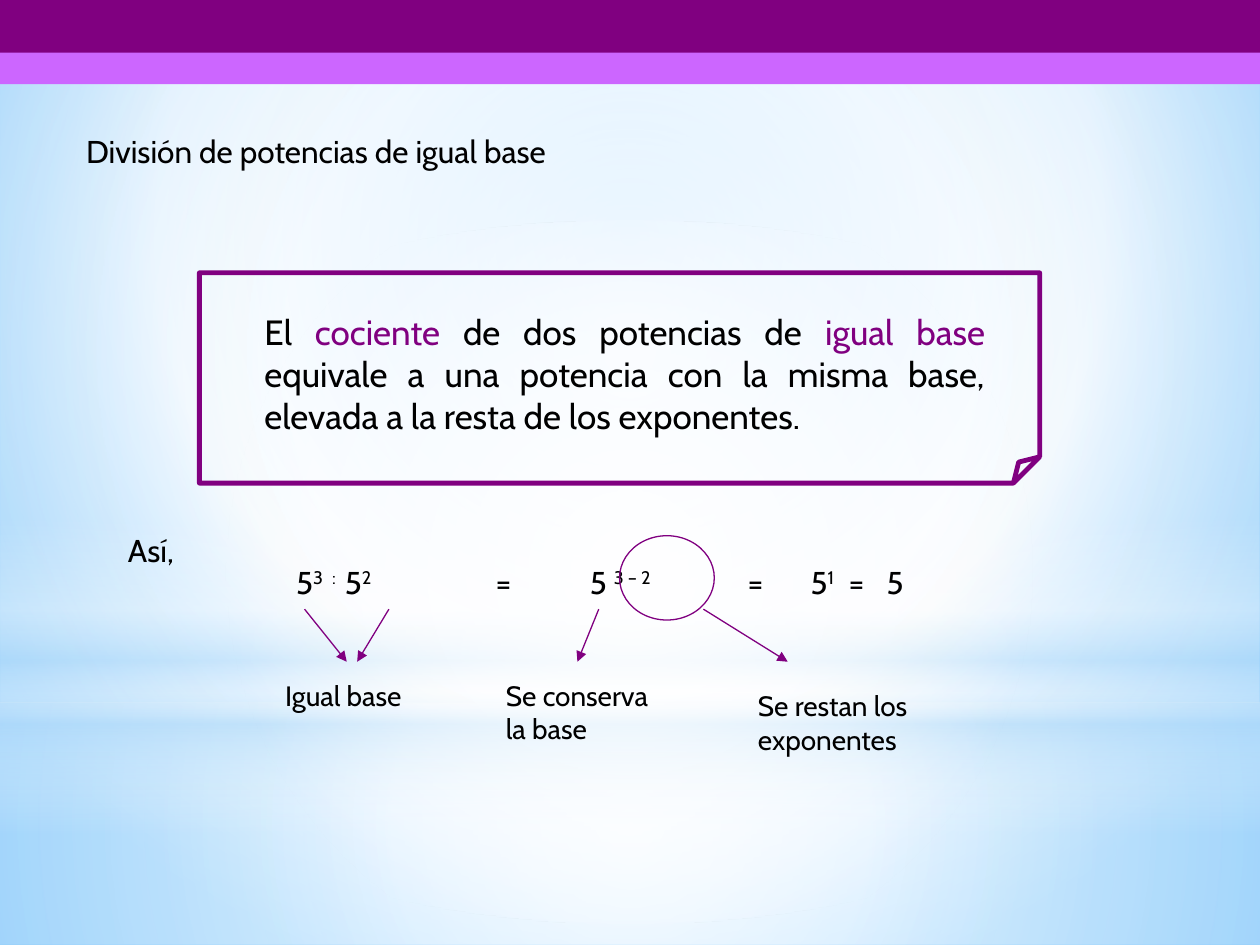
from dataclasses import dataclass
from typing import NamedTuple

from lxml.etree import SubElement
from pptx import Presentation
from pptx.dml.color import RGBColor
from pptx.enum.shapes import MSO_CONNECTOR, MSO_SHAPE
from pptx.enum.text import MSO_ANCHOR, PP_ALIGN
from pptx.oxml.ns import qn
from pptx.util import Cm, Pt

PURPLE = "800080"
LILAC = "CC66FF"
BLACK = "000000"
WHITE = "FFFFFF"
SKY = "B4DCFA"
FONT = "Cabin"
WIDTH, HEIGHT = 25.4, 19.05
CENTER = (50, 50, 50, 50)


class Box(NamedTuple):
    left: float
    top: float
    width: float
    height: float


class Stop(NamedTuple):
    position: int
    color: str
    opacity: int = 100


class Piece(NamedTuple):
    text: str
    color: str = BLACK
    raised: bool = False
    spacing: float = 0


@dataclass
class Label:
    box: Box
    pieces: list[Piece]
    size: int = 18
    alignment: PP_ALIGN = PP_ALIGN.LEFT


@dataclass
class Glow:
    kind: MSO_SHAPE
    box: Box
    stops: list[Stop]
    focus: tuple[int, ...] | None = CENTER


class Arrow(NamedTuple):
    start_x: float
    end_x: float


def rgb(color: str) -> RGBColor:
    return RGBColor.from_string(color)


def lengths(box: Box) -> list[Cm]:
    return [Cm(value) for value in box]


def set_gradient(fill, parent, stops: list[Stop], focus: tuple[int, ...] | None) -> None:
    fill.solid()
    solid = parent.find(qn("a:solidFill"))
    gradient = SubElement(parent, qn("a:gradFill"), rotWithShape="1")
    parent.replace(solid, gradient)
    stop_list = SubElement(gradient, qn("a:gsLst"))
    for stop in stops:
        entry = SubElement(stop_list, qn("a:gs"), pos=str(stop.position * 1000))
        color = SubElement(entry, qn("a:srgbClr"), val=stop.color)
        if stop.opacity < 100:
            SubElement(color, qn("a:alpha"), val=str(stop.opacity * 1000))
    if focus is None:
        SubElement(gradient, qn("a:lin"), ang="5400000", scaled="0")
        return
    circle = SubElement(gradient, qn("a:path"), path="circle")
    edges = {side: str(value * 1000) for side, value in zip("ltrb", focus)}
    SubElement(circle, qn("a:fillToRect"), **edges)


def add_plain_shape(slide, kind: MSO_SHAPE, box: Box):
    shape = slide.shapes.add_shape(kind, *lengths(box))
    shape.shadow.inherit = False
    shape.fill.background()
    shape.line.fill.background()
    return shape


def add_glow(slide, glow: Glow) -> None:
    shape = add_plain_shape(slide, glow.kind, glow.box)
    set_gradient(shape.fill, shape._element.spPr, glow.stops, glow.focus)


def add_band(slide, box: Box, color: str) -> None:
    shape = add_plain_shape(slide, MSO_SHAPE.RECTANGLE, box)
    shape.fill.solid()
    shape.fill.fore_color.rgb = rgb(color)


def add_outline(slide, kind: MSO_SHAPE, box: Box, weight: float):
    shape = add_plain_shape(slide, kind, box)
    shape.line.color.rgb = rgb(PURPLE)
    shape.line.width = Pt(weight)
    return shape


def write_label(shape, label: Label) -> None:
    shape.left, shape.top, shape.width, shape.height = lengths(label.box)
    frame = shape.text_frame
    frame.word_wrap = True
    frame.vertical_anchor = MSO_ANCHOR.TOP
    paragraph = frame.paragraphs[0]
    paragraph.alignment = label.alignment
    for piece in label.pieces:
        run = paragraph.add_run()
        run.text = piece.text
        run.font.name = FONT
        run.font.size = Pt(label.size)
        run.font.color.rgb = rgb(piece.color)
        properties = run._r.get_or_add_rPr()
        if piece.raised:
            properties.set("baseline", "30000")
        if piece.spacing:
            properties.set("spc", str(round(piece.spacing * 100)))


def add_arrow(slide, arrow: Arrow, top: float = 12.28, bottom: float = 13.34) -> None:
    connector = slide.shapes.add_connector(
        MSO_CONNECTOR.STRAIGHT, Cm(arrow.start_x), Cm(top), Cm(arrow.end_x), Cm(bottom)
    )
    connector.line.color.rgb = rgb(PURPLE)
    connector.line.width = Pt(0.75)
    SubElement(connector.line._get_or_add_ln(), qn("a:tailEnd"), type="triangle")
    SubElement(connector._element.spPr, qn("a:effectLst"))


BACKGROUND = [Stop(0, "9ED5FF"), Stop(60, WHITE), Stop(100, "5BB9FF")]
GLOWS = [
    Glow(MSO_SHAPE.RECTANGLE, Box(0, 14.17, WIDTH, 4.88),
         [Stop(0, WHITE, 91), Stop(37, WHITE, 76), Stop(100, SKY, 79)]),
    Glow(MSO_SHAPE.RECTANGLE, Box(0, 0, WIDTH, 14.17),
         [Stop(0, WHITE, 89), Stop(48, WHITE, 62), Stop(100, SKY, 79)]),
    Glow(MSO_SHAPE.RECTANGLE, Box(0, 10.46, WIDTH, 6.35),
         [Stop(0, WHITE, 0), Stop(29, WHITE, 30), Stop(45, SKY, 40),
          Stop(55, WHITE, 26), Stop(65, SKY, 60), Stop(100, WHITE, 0)], None),
    Glow(MSO_SHAPE.OVAL, Box(0, 4.45, WIDTH, 14.17), [Stop(0, WHITE), Stop(56, WHITE, 0)]),
]
HEADING = Label(Box(1.48, 2.54, 19.05, 1.27), [Piece("División de potencias de igual base")])
ROW_TOP, ROW_HEIGHT = 11.22, 1.27
LABELS = [
    Label(Box(5.08, 6.14, 15.03, 2.79), [
        Piece("El "), Piece("cociente", PURPLE), Piece(" de dos potencias de "),
        Piece("igual base", PURPLE),
        Piece(" equivale a una potencia con la misma base, elevada a la resta de los exponentes."),
    ], 20, PP_ALIGN.JUSTIFY),
    Label(Box(2.33, 10.58, 2.75, 1.02), [Piece("Así,")]),
    Label(Box(5.72, ROW_TOP, 3.39, ROW_HEIGHT), [
        Piece("5"), Piece("3 : ", raised=True, spacing=1.4), Piece("5"), Piece("2", raised=True)]),
    Label(Box(9.74, ROW_TOP, 2.75, ROW_HEIGHT), [Piece("=")]),
    Label(Box(11.64, ROW_TOP, 3.39, ROW_HEIGHT), [Piece("5 "), Piece("3 – 2", raised=True)]),
    Label(Box(14.82, ROW_TOP, 2.75, ROW_HEIGHT), [Piece("=")]),
    Label(Box(16.09, ROW_TOP, 4.66, ROW_HEIGHT),
          [Piece("5"), Piece("1", raised=True), Piece(" = ", spacing=4.3), Piece("5")]),
    Label(Box(5.5, 13.55, 3.6, 0.94), [Piece("Igual base")], 16),
    Label(Box(9.95, 13.55, 3.81, 1.63), [Piece("Se conserva la base")], 16),
    Label(Box(15.03, 13.76, 4.23, 1.63), [Piece("Se restan los exponentes")], 16),
]
ARROWS = [Arrow(6.14, 6.99), Arrow(7.84, 7.2), Arrow(12.07, 11.64), Arrow(14.18, 15.88)]


def main() -> None:
    presentation = Presentation()
    presentation.slide_width, presentation.slide_height = Cm(WIDTH), Cm(HEIGHT)
    slide = presentation.slides.add_slide(presentation.slide_layouts[5])
    set_gradient(slide.background.fill, slide._element.cSld.bg.bgPr, BACKGROUND, (20, 10, 20, 60))
    for glow in GLOWS:
        add_glow(slide, glow)
    add_band(slide, Box(0, 0, WIDTH, 1.27), PURPLE)
    add_band(slide, Box(0, 1.06, WIDTH, 0.64), LILAC)
    title = slide.shapes.title
    write_label(title, HEADING)
    slide.shapes._spTree.append(title._element)
    note = add_outline(slide, MSO_SHAPE.FOLDED_CORNER, Box(4.02, 5.5, 16.94, 4.24), 2.75)
    fold = note._element.spPr.find(".//" + qn("a:avLst"))
    SubElement(fold, qn("a:gd"), name="adj", fmla="val 12500")
    for label in LABELS:
        write_label(slide.shapes.add_textbox(*lengths(label.box)), label)
    add_outline(slide, MSO_SHAPE.OVAL, Box(12.49, 10.8, 1.91, 1.7), 0.75)
    for arrow in ARROWS:
        add_arrow(slide, arrow)
    presentation.save("out.pptx")


if __name__ == "__main__":
    main()
